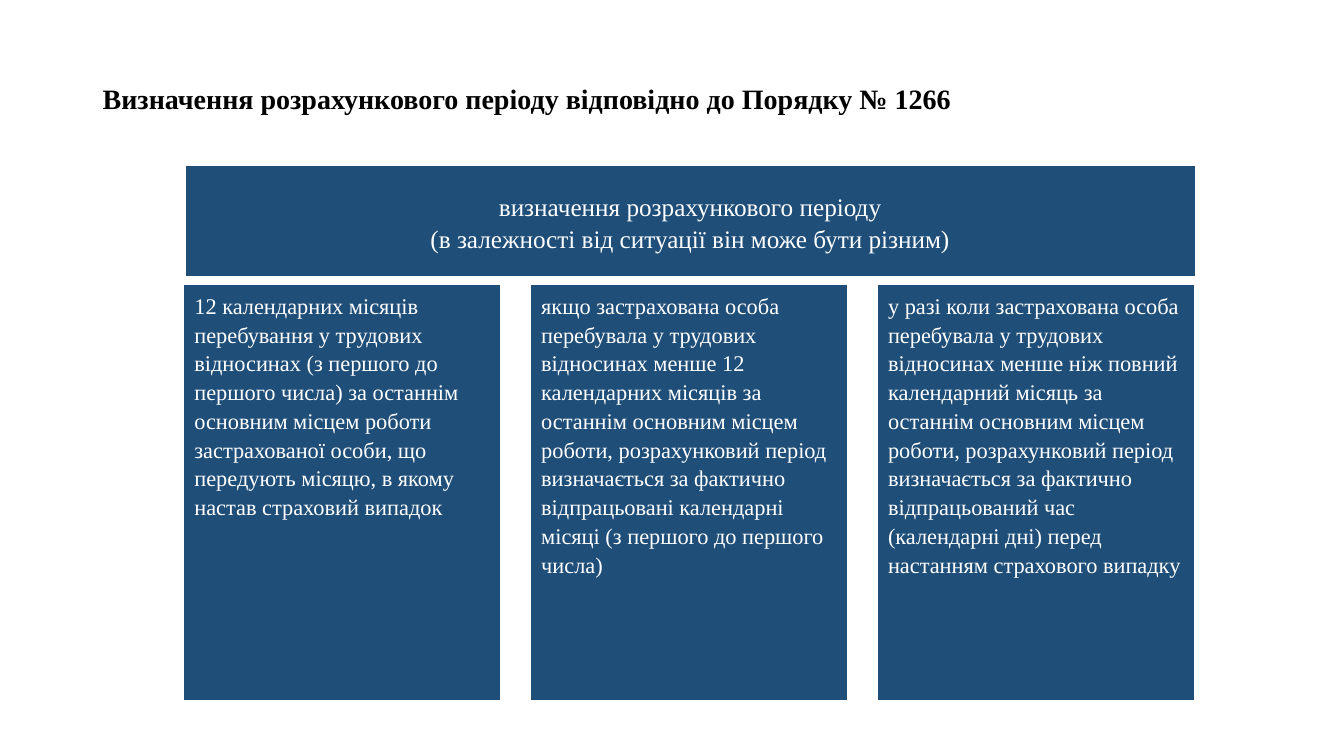
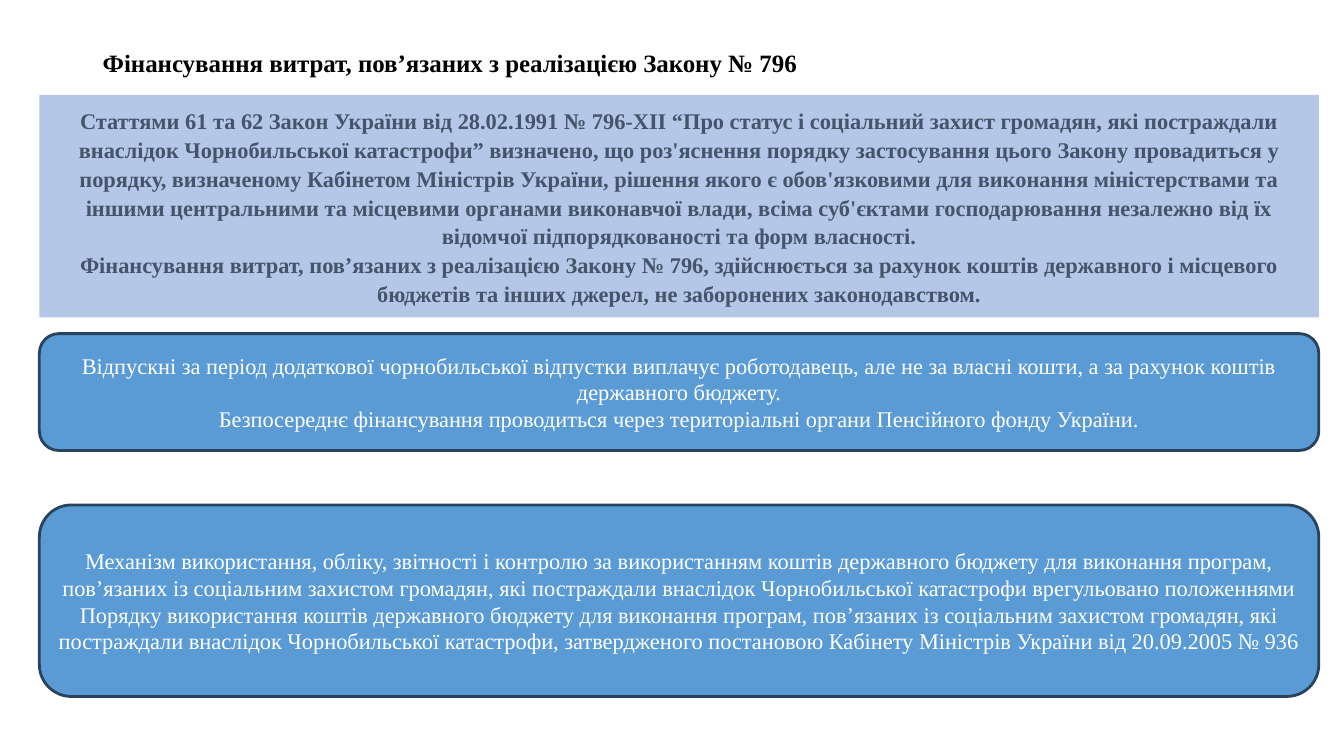
import pptx
import pptx.util
import pptx.dml.color
import pptx.enum.shapes
import pptx.enum.text

Inches = pptx.util.Inches
Pt = pptx.util.Pt
RGBColor = pptx.dml.color.RGBColor
Shape = pptx.enum.shapes.MSO_SHAPE
Anchor = pptx.enum.text.MSO_ANCHOR
Align = pptx.enum.text.PP_ALIGN

FONT = "Times New Roman"
BLACK = RGBColor(0x00, 0x00, 0x00)
WHITE = RGBColor(0xFF, 0xFF, 0xFF)
NAVY = RGBColor(0x1F, 0x4E, 0x79)
PALE = RGBColor(0xB4, 0xC7, 0xE7)
SLATE = RGBColor(0x44, 0x54, 0x6A)
BLUE = RGBColor(0x5B, 0x9B, 0xD5)
EDGE = RGBColor(0x27, 0x43, 0x5D)

HEADER = [
    "визначення розрахункового періоду",
    "(в залежності від ситуації він може бути різним)",
]
CASES = [
    "12 календарних місяців перебування у трудових відносинах (з першого до першого числа) за останнім основним місцем роботи застрахованої особи, що передують місяцю, в якому настав страховий випадок",
    "якщо застрахована особа перебувала у трудових відносинах менше 12 календарних місяців за останнім основним місцем роботи, розрахунковий період визначається за фактично відпрацьовані календарні місяці (з першого до першого числа)",
    "у разі коли застрахована особа перебувала у трудових відносинах менше ніж повний календарний місяць за останнім основним місцем роботи, розрахунковий період визначається за фактично відпрацьований час (календарні дні) перед настанням страхового випадку",
]
LAW = [
    "Статтями 61 та 62 Закон України від 28.02.1991 № 796-XII “Про статус і соціальний захист громадян, які постраждали внаслідок Чорнобильської катастрофи” визначено, що роз'яснення порядку застосування цього Закону провадиться у порядку, визначеному Кабінетом Міністрів України, рішення якого є обов'язковими для виконання міністерствами та іншими центральними та місцевими органами виконавчої влади, всіма суб'єктами господарювання незалежно від їх відомчої підпорядкованості та форм власності.",
    "Фінансування витрат, пов’язаних з реалізацією Закону № 796, здійснюється за рахунок коштів державного і місцевого бюджетів та інших джерел, не заборонених законодавством.",
]
PAYER = [
    "Відпускні за період додаткової чорнобильської відпустки виплачує роботодавець, але не за власні кошти, а за рахунок коштів державного бюджету.",
    "Безпосереднє фінансування проводиться через територіальні органи Пенсійного фонду України.",
]
ORDER = [
    "Механізм використання, обліку, звітності і контролю за використанням коштів державного бюджету для виконання програм, пов’язаних із соціальним захистом громадян, які постраждали внаслідок Чорнобильської катастрофи врегульовано положеннями Порядку використання коштів державного бюджету для виконання програм, пов’язаних із соціальним захистом громадян, які постраждали внаслідок Чорнобильської катастрофи, затвердженого постановою Кабінету Міністрів України від 20.09.2005 № 936",
]


def write(shape, lines, size=16, color=WHITE, bold=False,
          align=Align.CENTER, anchor=Anchor.MIDDLE, space=1.07):
    frame = shape.text_frame
    frame.word_wrap = True
    frame.vertical_anchor = anchor
    for i, line in enumerate(lines):
        para = frame.add_paragraph() if i else frame.paragraphs[0]
        para.alignment = align
        para.line_spacing = space
        run = para.add_run()
        run.text = line
        run.font.name = FONT
        run.font.size = Pt(size)
        run.font.bold = bold
        run.font.color.rgb = color


def panel(slide, box, lines, kind=Shape.FLOWCHART_PROCESS, fill=NAVY,
          edge=None, **style):
    shape = slide.shapes.add_shape(kind, *map(Inches, box))
    shape.shadow.inherit = False
    shape.fill.solid()
    shape.fill.fore_color.rgb = fill
    if edge is None:
        shape.line.fill.background()
    else:
        shape.line.color.rgb = edge
        shape.line.width = Pt(2)
    write(shape, lines, **style)


def title(slide, top, high, line, size):
    box = slide.shapes.add_textbox(*map(Inches, (0.92, top, 11.5, high)))
    write(box, [line], size=size, color=BLACK, bold=True,
          align=Align.LEFT, anchor=Anchor.TOP)


def columns(slide, box, cases, gap):
    left, top, wide, high = box
    width = (wide - gap * (len(cases) - 1)) / len(cases)
    for i, case in enumerate(cases):
        place = (left + i * (width + gap), top, width, high)
        panel(slide, place, [case], align=Align.LEFT, anchor=Anchor.TOP)


def period(slide, box):
    left, top, wide, high = box
    head, step = 1.09, 1.18
    panel(slide, (left + 0.01, top, wide, head), HEADER, size=18)
    columns(slide, (left, top + step, wide, high - step), CASES, 0.31)


def funding(slide, box):
    left, top, wide, high = box
    panel(slide, (left, top, wide, 2.21), LAW, kind=Shape.RECTANGLE,
          fill=PALE, color=SLATE, bold=True)
    for drop, tall, lines in ((2.37, 1.16, PAYER), (high - 1.9, 1.9, ORDER)):
        panel(slide, (left, top + drop, wide, tall), lines,
              kind=Shape.ROUNDED_RECTANGLE, fill=BLUE, edge=EDGE, space=1.0)


def main():
    deck = pptx.Presentation()
    deck.slide_width = Inches(13.33)
    deck.slide_height = Inches(7.5)
    blank = deck.slide_layouts[6]

    slide = deck.slides.add_slide(blank)
    title(slide, 0.74, 0.63,
          "Визначення розрахункового періоду відповідно до Порядку № 1266", 20)
    period(slide, (1.83, 1.65, 10.01, 5.29))

    slide = deck.slides.add_slide(blank)
    title(slide, 0.4, 0.42,
          "Фінансування витрат, пов’язаних з реалізацією Закону № 796", 17.8)
    funding(slide, (0.39, 0.94, 12.69, 5.97))

    deck.save("out.pptx")


if __name__ == "__main__":
    main()
